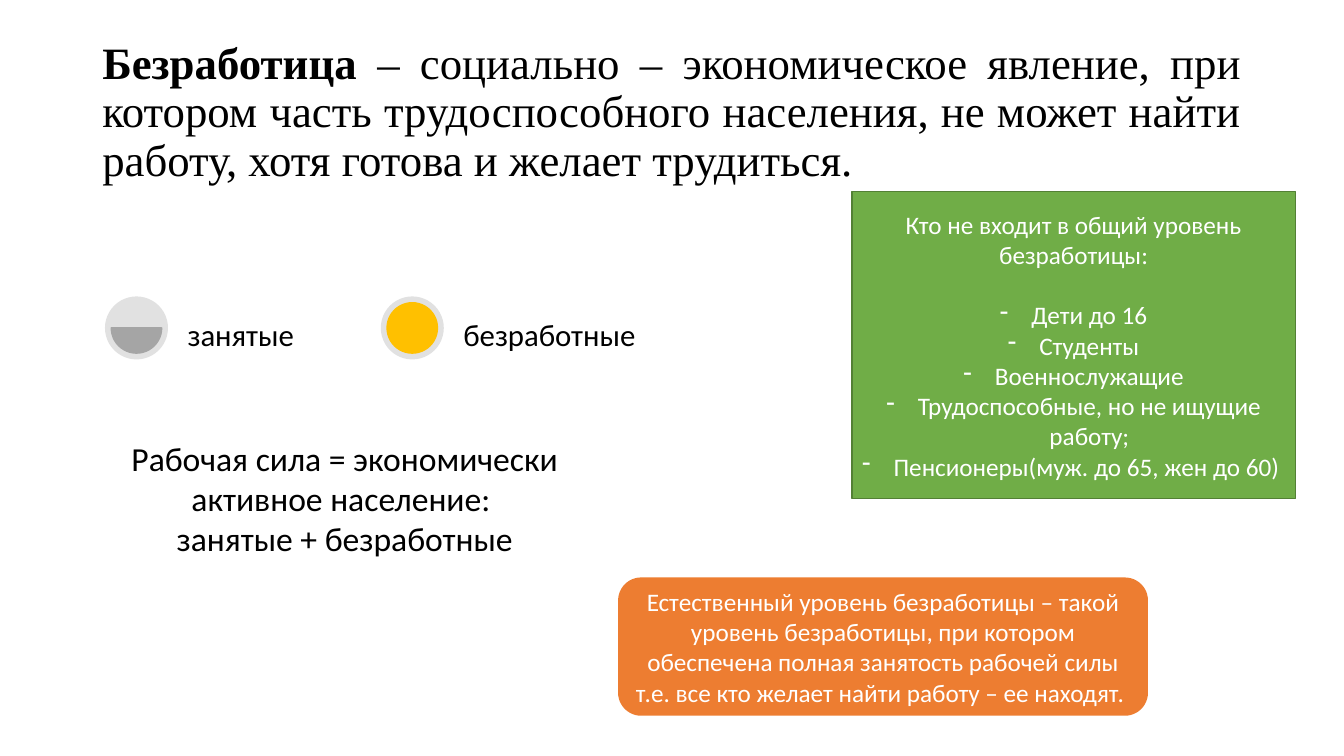
from dataclasses import dataclass
from lxml.etree import SubElement
from pptx import Presentation
from pptx.dml.color import RGBColor as RGB
from pptx.enum.shapes import MSO_SHAPE as SHAPE
from pptx.enum.text import MSO_ANCHOR as ANCHOR, PP_ALIGN as ALIGN
from pptx.oxml.ns import qn
from pptx.util import Pt


@dataclass(frozen=True)
class Theme:
    black: str = "000000"
    white: str = "FFFFFF"
    green: str = "70AD47"
    dark_green: str = "538035"
    orange: str = "ED7D31"
    ring: str = "E1E1E1"
    gray: str = "A5A5A5"
    yellow: str = "FFC000"
    serif: str = "Times New Roman"
    sans: str = "Calibri"
    title: int = 32
    lead: int = 24
    label: int = 22
    body: int = 18


def apply(obj, values):
    for name, value in values.items():
        setattr(obj, name, value)


class Canvas:
    def __init__(self, s, theme):
        self.s, self.t = s, theme

    def shape(self, kind, box, fill, line=None, adjust=()):
        sp = self.s.shapes.add_shape(kind, *map(Pt, box))
        sp.shadow.inherit = False
        sp.fill.solid()
        sp.fill.fore_color.rgb = RGB.from_string(fill)
        if line:
            sp.line.color.rgb = RGB.from_string(line)
            sp.line.width = Pt(1)
        else:
            sp.line.fill.background()
        for i, value in enumerate(adjust):
            sp.adjustments[i] = value
        return sp

    def box(self, box):
        return self.s.shapes.add_textbox(*map(Pt, box))

    def frame(self, sp, anchor=ANCHOR.MIDDLE, inset=None):
        tf = sp.text_frame
        apply(tf, {"word_wrap": True, "vertical_anchor": anchor})
        if inset is not None:
            sides = ("left", "top", "right", "bottom")
            apply(tf, {f"margin_{side}": Pt(inset) for side in sides})
        return tf

    def para(self, tf, runs, size, color, font=None, **fmt):
        p = tf.paragraphs[0]
        if p.runs:
            p = tf.add_paragraph()
        apply(p, {"alignment": ALIGN.CENTER, **fmt})
        for text, bold in runs:
            r = p.add_run()
            r.text = text
            apply(r.font, {"size": Pt(size), "bold": bold,
                           "name": font or self.t.sans})
            r.font.color.rgb = RGB.from_string(color)
        return p

    def bullet(self, p, indent):
        pPr = p._p.get_or_add_pPr()
        pPr.set("marL", str(Pt(indent)))
        pPr.set("indent", str(-Pt(indent)))
        SubElement(pPr, qn("a:buFontTx"))
        SubElement(pPr, qn("a:buChar")).set("char", "-")

    def legend(self, left, top, kind, color, text, adjust=()):
        self.shape(SHAPE.OVAL, (left, top, 45, 45), self.t.ring)
        self.shape(kind, (left + 4.5, top + 4.5, 36, 36), color, color, adjust)
        tf = self.frame(self.box((left + 54.5, top, 133, 45)), ANCHOR.BOTTOM, 4.5)
        self.para(tf, [(text, False)], self.t.label, self.t.black,
                  alignment=ALIGN.LEFT, line_spacing=0.9)


def main():
    prs = Presentation()
    apply(prs, {"slide_width": Pt(960), "slide_height": Pt(540)})
    t = Theme()
    c = Canvas(prs.slides.add_slide(prs.slide_layouts[6]), t)

    tf = c.frame(c.box((66, 28.75, 828, 104.5)))
    c.para(tf, [("Безработица", True),
                (" – социально – экономическое явление, при котором часть "
                 "трудоспособного населения, не может найти работу, "
                 "хотя готова и желает трудиться. ", False)],
           t.title, t.black, t.serif, alignment=ALIGN.JUSTIFY, line_spacing=0.9)

    sp = c.shape(SHAPE.RECTANGLE, (608.5, 136.75, 316.75, 219.5),
                 t.green, t.dark_green)
    tf = c.frame(sp)
    c.para(tf, [("Кто не входит в общий уровень безработицы:", False)],
           t.body, t.white, space_after=Pt(21.5))
    for item in ("Дети до 16", "Студенты", "Военнослужащие",
                 "Трудоспособные, но не ищущие работу;",
                 "Пенсионеры(муж. до 65, жен до 60) "):
        c.bullet(c.para(tf, [(item, False)], t.body, t.white), 22.5)

    c.legend(75, 211.75, SHAPE.CHORD, t.gray, "занятые", (0, 108))
    c.legend(272, 211.75, SHAPE.OVAL, t.yellow, "безработные")

    sp = c.shape(SHAPE.ROUNDED_RECTANGLE, (441.5, 412.5, 378.5, 98.75), t.orange)
    c.para(c.frame(sp), [("Естественный уровень безработицы – такой уровень "
                          "безработицы, при котором обеспечена полная занятость "
                          "рабочей силы т.е. все кто желает найти работу – "
                          "ее находят. ", False)], t.body, t.white)

    tf = c.frame(c.box((82, 309, 328.5, 94.5)), ANCHOR.TOP)
    for line in ("Рабочая сила = экономически активное население: ",
                 "занятые + безработные"):
        c.para(tf, [(line, False)], t.lead, t.black)

    prs.save("out.pptx")


if __name__ == "__main__":
    main()
